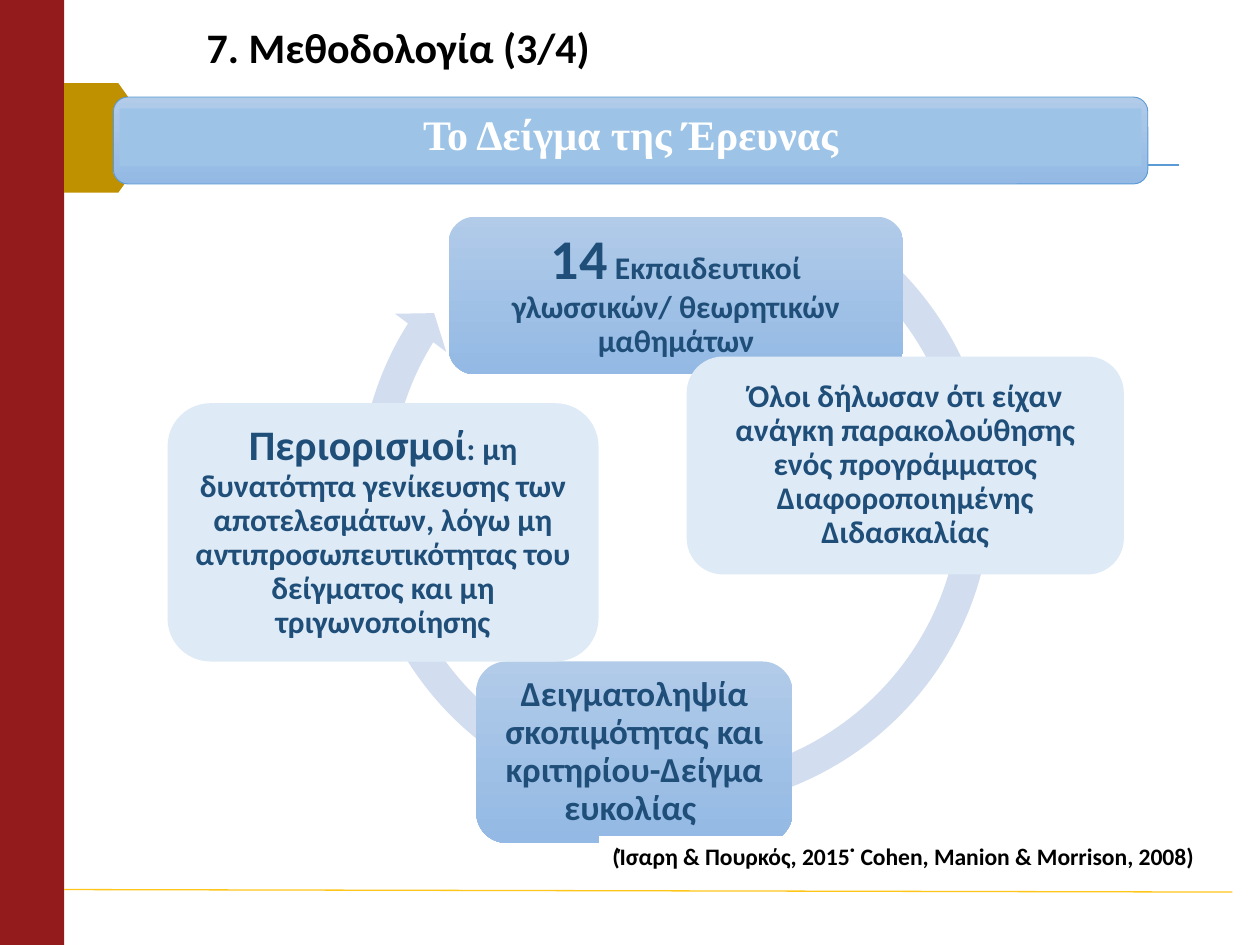
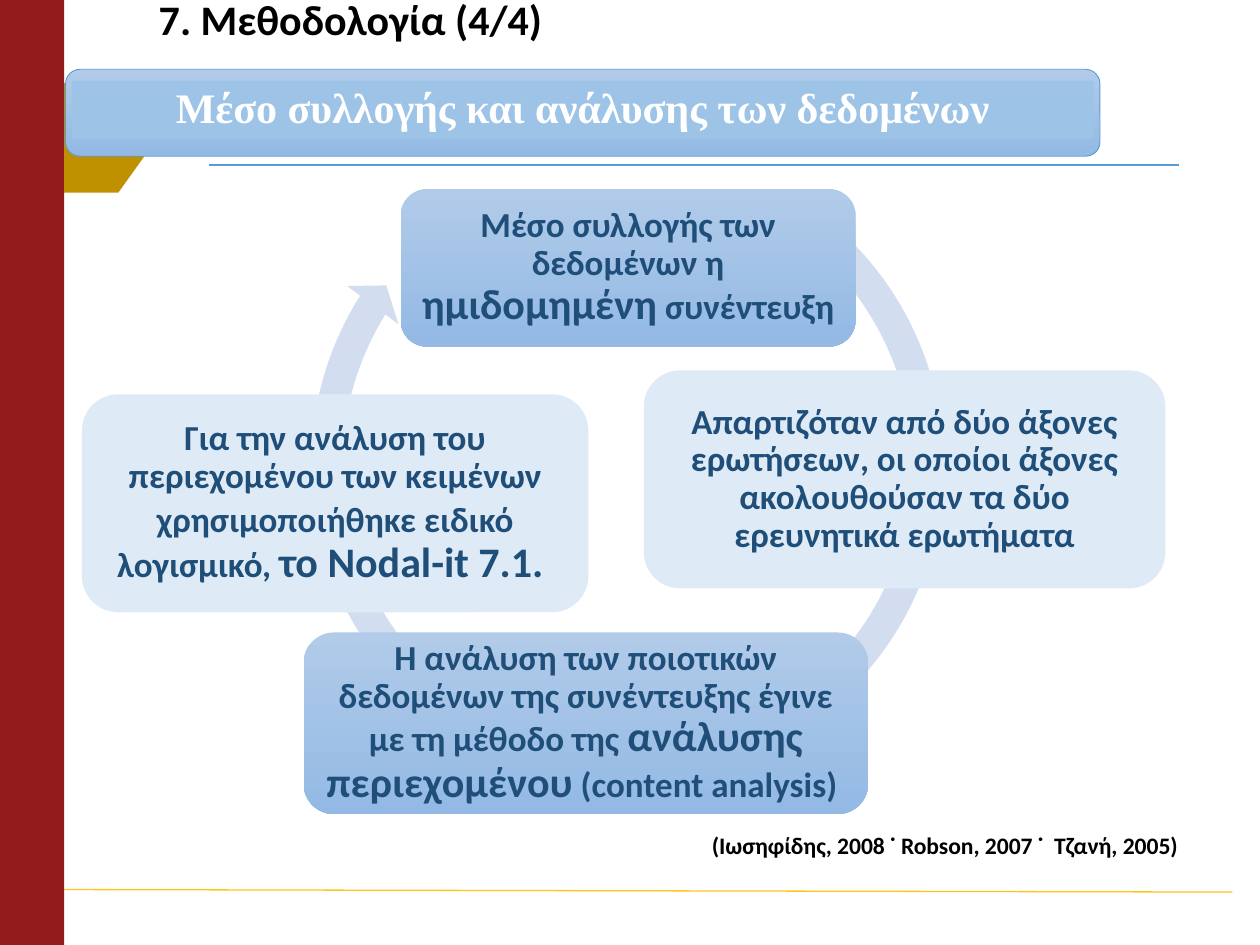
from pptx import Presentation
from pptx.dml.color import RGBColor
from pptx.enum.shapes import MSO_CONNECTOR, MSO_SHAPE
from pptx.enum.text import MSO_ANCHOR, MSO_AUTO_SIZE, PP_ALIGN
from pptx.oxml import parse_xml
from pptx.oxml.ns import nsdecls
from pptx.util import Inches, Pt

RECTANGLE = MSO_SHAPE.RECTANGLE
ROUNDED = MSO_SHAPE.ROUNDED_RECTANGLE
PENTAGON = MSO_SHAPE.PENTAGON
CIRCULAR_ARROW = MSO_SHAPE.CIRCULAR_ARROW
STRAIGHT = MSO_CONNECTOR.STRAIGHT
MIDDLE = MSO_ANCHOR.MIDDLE
NO_AUTOFIT = MSO_AUTO_SIZE.NONE
LEFT, CENTER = PP_ALIGN.LEFT, PP_ALIGN.CENTER

BLACK = RGBColor(0x00, 0x00, 0x00)
WHITE = RGBColor(0xFF, 0xFF, 0xFF)
DARK_RED = RGBColor(0x93, 0x1B, 0x1B)
GOLD = RGBColor(0xBF, 0x90, 0x00)
YELLOW = RGBColor(0xFF, 0xC6, 0x1A)
BLUE = RGBColor(0x5B, 0x9B, 0xD5)
BAND_BLUE = RGBColor(0x9D, 0xC3, 0xE6)
ARROW_BLUE = RGBColor(0xD2, 0xDE, 0xEF)
PALE_BLUE = RGBColor(0xDE, 0xEB, 0xF7)
NAVY = RGBColor(0x1F, 0x4E, 0x79)
GRADIENT = (RGBColor(0xB1, 0xCB, 0xE9), RGBColor(0x93, 0xB9, 0xE4))

BODY_FONT = "Calibri"
BAND_FONT = "Times New Roman"
TITLE_ONLY = 5

# Each card: box relative to the cycle arrow, inset, runs of (text, size);
# cards run clockwise from the top
SLIDES = [
    {
        "title": "7. Μεθοδολογία (3/4)",
        "band": "Το Δείγμα της Έρευνας",
        "origin": (0.9, 0.77),
        "cards": [
            ((0.84, 0.45, 3.61, 1.25), 0.13,
             [("14", 32), (" Εκπαιδευτικοί γλωσσικών/ θεωρητικών μαθημάτων", 18)]),
            ((2.73, 1.56, 3.47, 1.73), 0.07,
             [("Όλοι δήλωσαν ότι είχαν ανάγκη παρακολούθησης ενός προγράμματος "
               "Διαφοροποιημένης Διδασκαλίας", 18)]),
            ((1.06, 3.98, 2.51, 1.44), 0.08,
             [("Δειγματοληψία σκοπιμότητας και κριτηρίου-Δείγμα ευκολίας ", 20)]),
            ((-1.39, 1.93, 3.42, 2.05), 0.1,
             [("Περιορισμοί", 24),
              (": μη δυνατότητα γενίκευσης των αποτελεσμάτων, λόγω μη "
               "αντιπροσωπευτικότητας του δείγματος και μη τριγωνοποίησης", 18)]),
        ],
        "citation": "(Ίσαρη & Πουρκός, 2015˙ Cohen, Manion & Morrison, 2008)",
        "citation_box": (4.76, 6.64, 5.04, 0.41),
    },
    {
        "title": "7. Μεθοδολογία (4/4)",
        "band": "Μέσο συλλογής και ανάλυσης των δεδομένων",
        "origin": (0.52, 0.55),
        "cards": [
            ((0.84, 0.45, 3.61, 1.25), 0.08,
             [("Μέσο συλλογής των δεδομένων η ", 20), ("ημιδομημένη", 24),
              (" συνέντευξη", 20)]),
            ((2.77, 1.89, 4.14, 1.73), 0.08,
             [("Απαρτιζόταν από δύο άξονες ερωτήσεων, οι οποίοι άξονες "
               "ακολουθούσαν τα δύο ερευνητικά ερωτήματα", 20)]),
            ((0.07, 3.97, 4.48, 1.44), 0.08,
             [("Η ανάλυση των ποιοτικών δεδομένων της συνέντευξης έγινε "
               "με τη μέθοδο της ", 20),
              ("ανάλυσης περιεχομένου", 24), (" (content analysis) ", 20)]),
            ((-1.69, 2.08, 4.02, 1.73), 0.08,
             [("Για την ανάλυση του περιεχομένου των κειμένων "
               "χρησιμοποιήθηκε ειδικό", 20),
              (" ", 24), ("λογισμικό, ", 20), ("το Nodal-it 7.1. ", 24)]),
        ],
        "citation": "(Ιωσηφίδης, 2008 ˙ Robson, 2007 ˙  Τζανή, 2005)",
        "citation_box": (5.55, 6.55, 4.15, 0.41),
    },
]


def add_block(slide, kind, box, color=None):
    """Add a borderless shape; without a color it gets the blue gradient."""
    shape = slide.shapes.add_shape(kind, *map(Inches, box))
    shape.shadow.inherit = False
    shape.line.fill.background()
    if color is not None:
        shape.fill.solid()
        shape.fill.fore_color.rgb = color
    else:
        shape.fill.gradient()
        shape.fill.gradient_angle = 270
        for stop, stop_color in zip(shape.fill.gradient_stops, GRADIENT):
            stop.color.rgb = stop_color
    return shape


def add_rule(slide, start, end, color):
    rule = slide.shapes.add_connector(STRAIGHT, *map(Inches, start + end))
    rule.line.color.rgb = color
    rule.line.width = Pt(0.75)
    rule._element.spPr.append(parse_xml(f"<a:effectLst {nsdecls('a')}/>"))


def write_runs(text_frame, runs, color, font_name=BODY_FONT, alignment=CENTER,
               inset=None, line_spacing=0.9):
    text_frame.word_wrap = True
    text_frame.vertical_anchor = MIDDLE
    if inset is not None:
        text_frame.margin_left = text_frame.margin_right = Inches(inset)
        text_frame.margin_top = text_frame.margin_bottom = Inches(inset)
    paragraph = text_frame.paragraphs[0]
    paragraph.alignment = alignment
    paragraph.line_spacing = line_spacing
    for text, size in runs:
        run = paragraph.add_run()
        run.text = text
        run.font.name = font_name
        run.font.size = Pt(size)
        run.font.bold = True
        run.font.color.rgb = color


def add_frame(slide):
    """Side bar, rules and gold tab shared by the slides."""
    add_block(slide, RECTANGLE, (0, 0, 0.51, 7.5), DARK_RED)
    add_rule(slide, (1.66, 1.31), (9.36, 1.31), BLUE)
    add_rule(slide, (0.51, 7.06), (9.78, 7.08), YELLOW)
    tab = add_block(slide, PENTAGON, (0.51, 0.66, 0.74, 0.87), GOLD)
    tab.adjustments[0] = 0.42


def set_title(slide, text, left, top):
    title = slide.shapes.title
    title.left, title.top = Inches(left), Inches(top)
    title.width, title.height = Inches(7.87), Inches(0.63)
    title.text_frame.auto_size = NO_AUTOFIT
    write_runs(title.text_frame, [(text, 24)], BLACK, alignment=LEFT)


def add_band(slide, text, left, top):
    band = add_block(slide, ROUNDED, (left, top, 8.21, 0.69))
    band.line.color.rgb = BLUE
    band.line.width = Pt(0.5)
    label = add_block(slide, RECTANGLE, (left + 0.05, top + 0.09, 8.11, 0.46),
                      BAND_BLUE)
    write_runs(label.text_frame, [(text, 24)], WHITE, BAND_FONT, inset=0.13)


def add_cycle(slide, cards, left, top):
    """Circular arrow with four cards around it."""
    arrow = add_block(slide, CIRCULAR_ARROW, (left, top, 5.28, 5.28), ARROW_BLUE)
    for index, value in enumerate((0.047, 2.729, 127.266, 181.029, 0.048)):
        arrow.adjustments[index] = value
    for index, ((x, y, width, height), inset, runs) in enumerate(cards):
        color = PALE_BLUE if index % 2 else None
        card = add_block(slide, ROUNDED, (left + x, top + y, width, height), color)
        write_runs(card.text_frame, runs, NAVY, inset=inset)


def add_citation(slide, text, box):
    table = slide.shapes.add_table(1, 1, *map(Inches, box)).table
    cell = table.cell(0, 0)
    cell.fill.solid()
    cell.fill.fore_color.rgb = WHITE
    write_runs(cell.text_frame, [(text, 13.5)], BLACK, alignment=LEFT,
               line_spacing=1.0)
    cell.vertical_anchor = MSO_ANCHOR.TOP


def add_methodology_slide(presentation, content):
    slide = presentation.slides.add_slide(presentation.slide_layouts[TITLE_ONLY])
    left, top = content["origin"]
    add_frame(slide)
    set_title(slide, content["title"], left + 0.64, top - 0.69)
    add_band(slide, content["band"], left, top)
    add_cycle(slide, content["cards"], left + 1.82, top + 0.5)
    add_citation(slide, content["citation"], content["citation_box"])


def main():
    presentation = Presentation()
    presentation.slide_width = Inches(10)
    presentation.slide_height = Inches(7.5)
    for content in SLIDES:
        add_methodology_slide(presentation, content)
    presentation.save("out.pptx")


if __name__ == "__main__":
    main()
